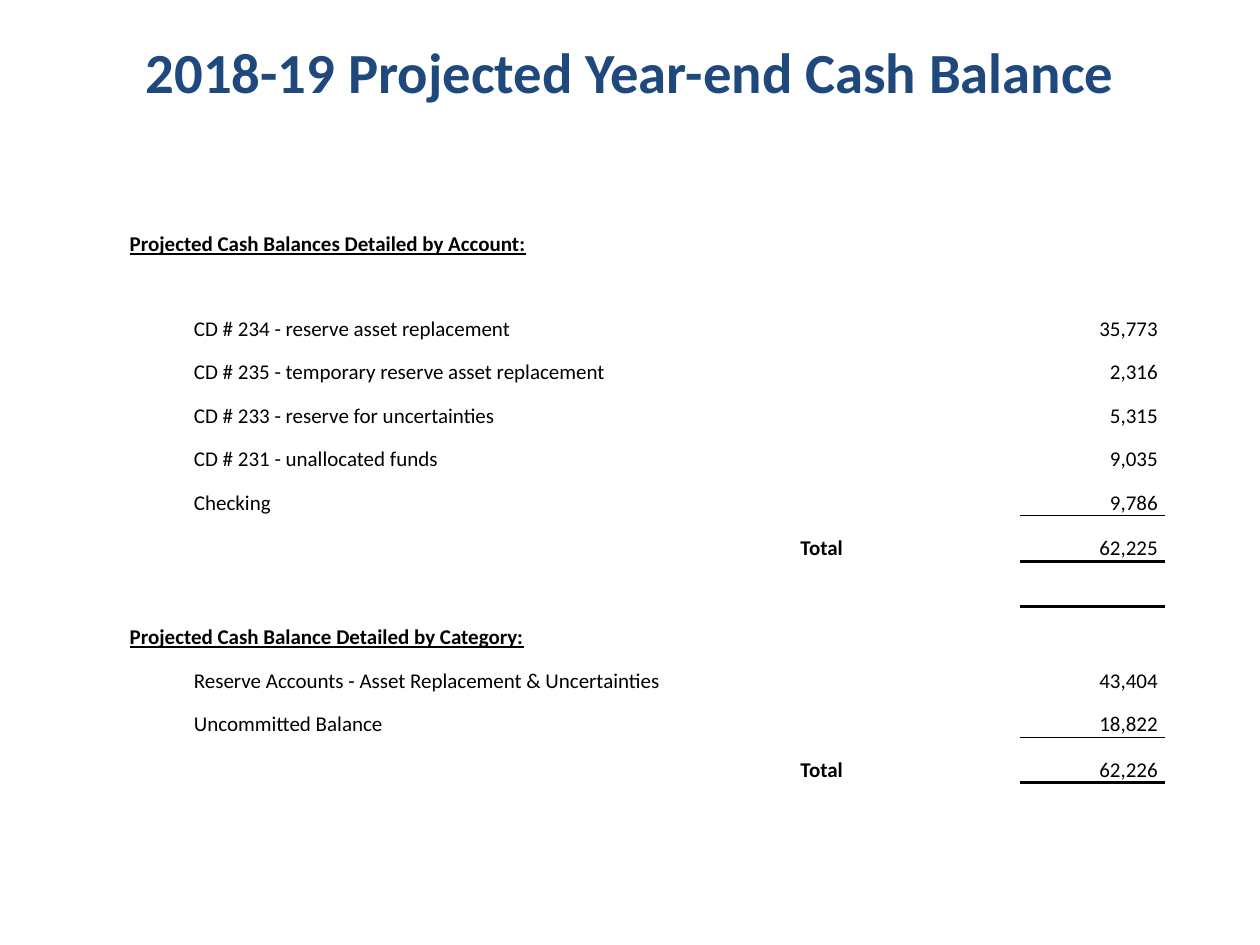
from dataclasses import dataclass

from lxml import etree
from pptx import Presentation
from pptx.dml.color import RGBColor
from pptx.enum.text import MSO_ANCHOR, PP_ALIGN
from pptx.oxml.ns import qn
from pptx.table import Table, _Cell
from pptx.util import Inches, Pt

LEFT, CENTER, RIGHT = PP_ALIGN.LEFT, PP_ALIGN.CENTER, PP_ALIGN.RIGHT
MIDDLE, BOTTOM = MSO_ANCHOR.MIDDLE, MSO_ANCHOR.BOTTOM


@dataclass(frozen=True)
class Theme:
    font: str = "Calibri"
    title_size: float = 32.4
    body_size: float = 12
    title_color: str = "1F497D"
    ink: str = "000000"
    thin_rule: float = 0.5
    thick_rule: float = 2


@dataclass(frozen=True)
class Row:
    height: float
    label: str = ""
    amount: str = ""
    heading: bool = False
    total: bool = False
    rule_above: float = 0
    rule_below: float = 0


THEME = Theme()
COLUMN_WIDTHS = (0.44, 0.51, 5.17, 0.26, 1.14, 1.14)
HEADING_COL, LABEL_COL, AMOUNT_COL = 1, 2, 5
ENTRY_HEIGHT = 0.69 / 2
TOTAL_HEIGHT = 0.36
CELL_MARGIN = 0.01
AMOUNT_MARGIN = 0.05

ACCOUNTS = [
    ("CD # 234 - reserve asset replacement", 35773),
    ("CD # 235 - temporary reserve asset replacement", 2316),
    ("CD # 233 - reserve for uncertainties", 5315),
    ("CD # 231 - unallocated funds", 9035),
    ("Checking", 9786),
]
CATEGORIES = [
    ("Reserve Accounts - Asset Replacement & Uncertainties", 43404),
    ("Uncommitted Balance", 18822),
]


def section_rows(heading: str, entries: list[tuple[str, int]],
                 gap: float = 0) -> list[Row]:
    """Heading, optional gap, entries, ruled total and a closing spacer."""
    rows = [Row(0.35, heading, heading=True)]
    if gap:
        rows.append(Row(gap))
    for label, amount in entries:
        is_last = label == entries[-1][0]
        rows.append(Row(ENTRY_HEIGHT, label, f"{amount:,}",
                        rule_below=THEME.thin_rule if is_last else 0))
    total = sum(amount for _, amount in entries)
    rows.append(Row(TOTAL_HEIGHT, "Total", f"{total:,}", total=True,
                    rule_above=THEME.thin_rule, rule_below=THEME.thick_rule))
    rows.append(Row(TOTAL_HEIGHT, rule_above=THEME.thick_rule))
    return rows


def add_rule(cell: _Cell, side: str, width: float) -> None:
    line = etree.Element(qn(f"a:{side}"), w=str(Pt(width)))
    fill = etree.SubElement(line, qn("a:solidFill"))
    etree.SubElement(fill, qn("a:srgbClr"), val=THEME.ink)
    cell._tc.get_or_add_tcPr().insert(0, line)


def write_cell(cell: _Cell, text: str, align: PP_ALIGN = LEFT,
               bold: bool = False, underline: bool = False) -> None:
    cell.text_frame.text = text
    paragraph = cell.text_frame.paragraphs[0]
    paragraph.alignment = align
    font = paragraph.runs[0].font
    font.name, font.size = THEME.font, Pt(THEME.body_size)
    font.bold, font.underline = bold, underline
    font.color.rgb = RGBColor.from_string(THEME.ink)


def clear_cell_style(cell: _Cell) -> None:
    cell.fill.background()
    cell.vertical_anchor = BOTTOM
    cell.margin_left = cell.margin_right = cell.margin_top = Inches(CELL_MARGIN)
    cell.margin_bottom = 0


def fill_row(table: Table, index: int, row: Row) -> None:
    table.rows[index].height = Inches(row.height)
    for column in range(len(COLUMN_WIDTHS)):
        clear_cell_style(table.cell(index, column))
    if row.heading:
        heading_cell = table.cell(index, HEADING_COL)
        heading_cell.merge(table.cell(index, LABEL_COL))
        write_cell(heading_cell, row.label, bold=True, underline=True)
    elif row.label:
        write_cell(table.cell(index, LABEL_COL), row.label,
                   RIGHT if row.total else LEFT, bold=row.total)
    amount_cell = table.cell(index, AMOUNT_COL)
    if row.amount:
        write_cell(amount_cell, row.amount, RIGHT)
        amount_cell.margin_right = Inches(AMOUNT_MARGIN)
    # Each rule goes in first, so the bottom one precedes the top one here.
    if row.rule_below:
        add_rule(amount_cell, "lnB", row.rule_below)
    if row.rule_above:
        add_rule(amount_cell, "lnT", row.rule_above)


def main() -> None:
    presentation = Presentation()
    presentation.slide_width, presentation.slide_height = Inches(10), Inches(7.5)
    slide = presentation.slides.add_slide(presentation.slide_layouts[5])

    title = slide.shapes.title
    title.left, title.top = Inches(0.5), Inches(0.3)
    title.width, title.height = Inches(9), Inches(0.53)
    title.text_frame.text = "2018-19 Projected Year-end Cash Balance"
    title.text_frame.vertical_anchor = MIDDLE
    heading = title.text_frame.paragraphs[0]
    heading.alignment = CENTER
    font = heading.runs[0].font
    font.name, font.size, font.bold = THEME.font, Pt(THEME.title_size), True
    font.color.rgb = RGBColor.from_string(THEME.title_color)

    rows = [
        Row(TOTAL_HEIGHT),
        *section_rows("Projected Cash Balances Detailed by Account:",
                      ACCOUNTS, gap=0.33),
        *section_rows("Projected Cash Balance Detailed by Category:", CATEGORIES),
    ]
    table = slide.shapes.add_table(
        len(rows), len(COLUMN_WIDTHS), Inches(0.58), Inches(1.33),
        Inches(sum(COLUMN_WIDTHS)), Inches(sum(row.height for row in rows))).table
    table.first_row = table.horz_banding = False
    for column, width in zip(table.columns, COLUMN_WIDTHS):
        column.width = Inches(width)
    for index, row in enumerate(rows):
        fill_row(table, index, row)

    presentation.save("out.pptx")


if __name__ == "__main__":
    main()
